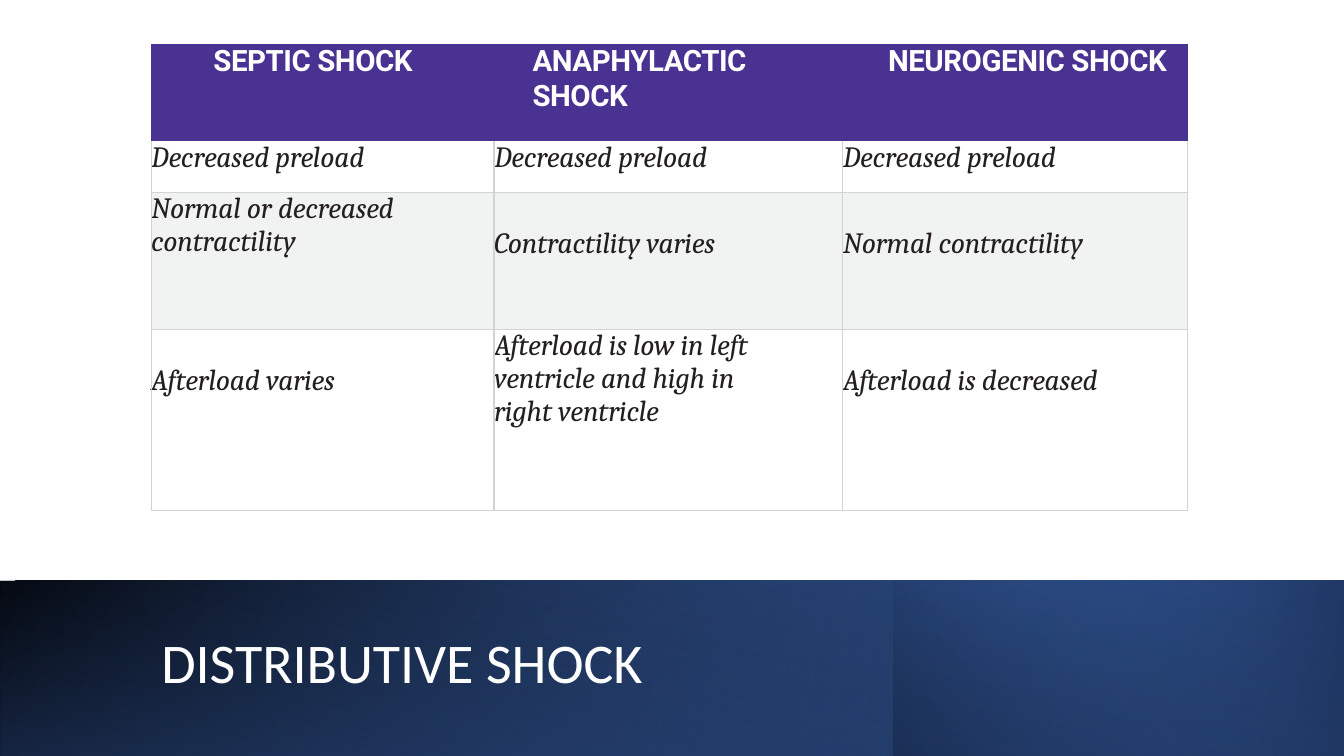
from lxml import etree
from pptx import Presentation
from pptx import util as u
from pptx.dml.color import RGBColor
from pptx.enum import shapes, text
from pptx.oxml import ns

WHITE = RGBColor(0xFF, 0xFF, 0xFF)
BLACK = RGBColor(0x00, 0x00, 0x00)
BLUE = RGBColor(0x44, 0x72, 0xC4)
NAVY = RGBColor(0x20, 0x38, 0x64)
PURPLE = RGBColor(0x49, 0x32, 0x91)
INK = RGBColor(0x23, 0x1F, 0x20)
STRIPE = RGBColor(0xF1, 0xF2, 0xF2)
RULE = RGBColor(0xD1, 0xD3, 0xD4)

NO_STYLE = "{2D5ABB26-0587-4C30-8999-92F81FD0307C}"
WIDTH, HEIGHT = 33.87, 19.05
BAND_TOP, BAND_HEIGHT = 14.63, 4.42
COLUMNS = [8.64, 8.79, 8.69]
ROWS = [2.44, 1.3, 3.45, 4.55]
HEADER_INDENTS = [1.57, 0.97, 1.14]
RIGHT_MARGINS = [0, 1.6, 0]
LOWERED = 0.86
CELLS = [
    [("SEPTIC SHOCK", 0), ("ANAPHYLACTIC SHOCK", 0), ("NEUROGENIC SHOCK", 0)],
    [("Decreased preload", 0)] * 3,
    [("Normal or decreased contractility", 0),
     ("Contractility varies", LOWERED), ("Normal contractility", LOWERED)],
    [("Afterload varies", LOWERED),
     ("Afterload is low in left ventricle and high in right ventricle", 0),
     ("Afterload is decreased", LOWERED)],
]


def add_tag(parent, tag, **attributes):
    return etree.SubElement(parent, ns.qn(tag), attributes)


class ShockSlide:
    text_size = u.Pt(21)
    heading_font = "Roboto"
    body_font = "Cambria"
    title_font = "Calibri"

    def __init__(self, deck):
        self.page = deck.slides.add_slide(deck.slide_layouts[5])

    def style(self, para, font, size, color, bold=False, italic=False, spacing=0):
        for span in para.runs:
            span.font.name = font
            span.font.size = size
            span.font.color.rgb = color
            span.font.bold = bold
            span.font.italic = italic
            span.font._element.set("spc", str(spacing))

    def gradient(self, left, width, stops, angle, rotation=0):
        box = self.page.shapes.add_shape(
            shapes.MSO_SHAPE.RECTANGLE, u.Cm(left), u.Cm(BAND_TOP),
            u.Cm(width), u.Cm(BAND_HEIGHT))
        box.shadow.inherit = False
        box.line.fill.background()
        box.fill.gradient()
        box.rotation = rotation
        properties = box._element.spPr
        if not rotation:
            properties.find(ns.qn("a:xfrm")).set("flipH", "1")
        fill = properties.find(ns.qn("a:gradFill"))
        fill.set("rotWithShape", "1")
        for child in list(fill):
            fill.remove(child)
        stop_list = add_tag(fill, "a:gsLst")
        for position, color, alpha in stops:
            stop = add_tag(stop_list, "a:gs", pos=str(position * 1000))
            tint = add_tag(stop, "a:srgbClr", val=str(color))
            if alpha < 100:
                add_tag(tint, "a:alpha", val=str(alpha * 1000))
        add_tag(fill, "a:lin", ang=str(angle * 60000), scaled="0")

    def title(self, wording):
        box = self.page.shapes.title
        box.left, box.top = u.Cm(3.81), u.Cm(15.32)
        box.width, box.height = u.Cm(27.48), u.Cm(2.87)
        frame = box.text_frame
        frame.text = wording
        frame.vertical_anchor = text.MSO_ANCHOR.MIDDLE
        para = frame.paragraphs[0]
        para.alignment = text.PP_ALIGN.LEFT
        para.line_spacing = 0.9
        self.style(para, self.title_font, u.Pt(40), WHITE)
        self.page.shapes._spTree.append(box._element)

    def border(self, cell, sides):
        properties = cell._tc.get_or_add_tcPr()
        for index, side in enumerate(sides):
            line = etree.Element(ns.qn(f"a:ln{side}"), w="12700")
            fill = add_tag(line, "a:solidFill")
            add_tag(fill, "a:srgbClr", val=str(RULE))
            properties.insert(index, line)

    def cell(self, cell, wording, row, column, top):
        cell.margin_left = cell.margin_bottom = 0
        cell.margin_top = u.Cm(top)
        cell.margin_right = u.Cm(RIGHT_MARGINS[column])
        cell.text = wording
        para = cell.text_frame.paragraphs[0]
        if row == 0:
            cell.fill.solid()
            cell.fill.fore_color.rgb = PURPLE
            para._p.get_or_add_pPr().set("marL", str(u.Cm(HEADER_INDENTS[column])))
            self.style(para, self.heading_font, self.text_size, WHITE,
                       bold=True, spacing=-30)
            return
        if row == 2:
            cell.fill.solid()
            cell.fill.fore_color.rgb = STRIPE
        else:
            cell.fill.background()
        if row > 1 and not top:
            para.line_spacing = 0.96
        self.style(para, self.body_font, self.text_size, INK,
                   italic=True, spacing=-15)
        self.border(cell, "LRB" if row == 1 else "LRTB")

    def table(self):
        frame = self.page.shapes.add_table(
            len(ROWS), len(COLUMNS), u.Cm(3.81), u.Cm(1.12),
            u.Cm(sum(COLUMNS)), u.Cm(sum(ROWS)))
        table = frame.table
        table.first_row = table.horz_banding = False
        table._tbl.tblPr.find(ns.qn("a:tableStyleId")).text = NO_STYLE
        for column, width in zip(table.columns, COLUMNS):
            column.width = u.Cm(width)
        for row, height in zip(table.rows, ROWS):
            row.height = u.Cm(height)
        for row, entries in enumerate(CELLS):
            for column, (wording, top) in enumerate(entries):
                self.cell(table.cell(row, column), wording, row, column, top)


def main():
    deck = Presentation()
    deck.slide_width, deck.slide_height = u.Cm(WIDTH), u.Cm(HEIGHT)
    slide = ShockSlide(deck)
    slide.gradient(0, WIDTH, [(0, BLACK, 100), (100, BLUE, 100)], 140)
    slide.gradient(0, WIDTH, [(0, BLUE, 0), (100, NAVY, 100)], 170)
    slide.gradient(22.53, 11.34, [(0, NAVY, 100), (100, BLUE, 0)], 220)
    slide.gradient(0, WIDTH, [(0, BLACK, 0), (99, NAVY, 55)], 280, rotation=180)
    slide.title("DISTRIBUTIVE SHOCK")
    slide.table()
    deck.save("out.pptx")


if __name__ == "__main__":
    main()
